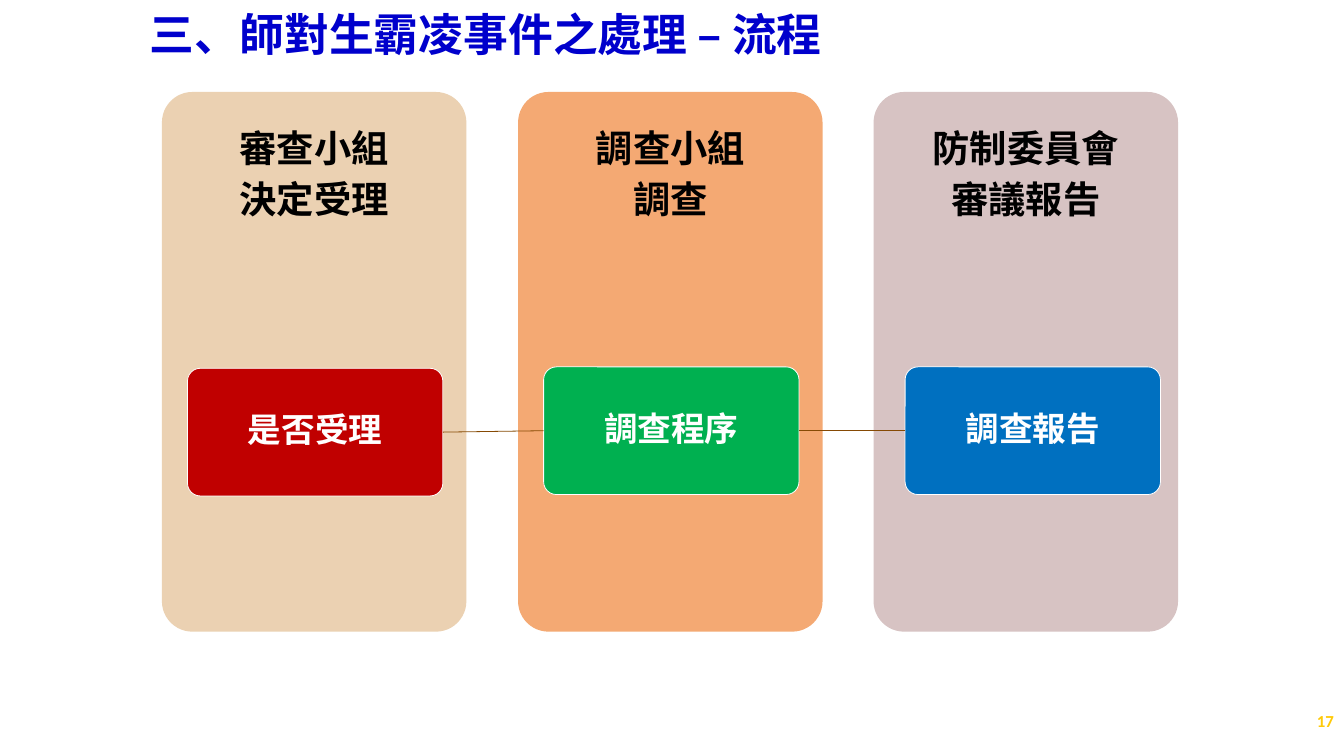
from lxml import etree
from pptx import Presentation
from pptx.dml.color import RGBColor
from pptx.enum.shapes import MSO_CONNECTOR, MSO_SHAPE
from pptx.enum.text import MSO_ANCHOR, MSO_AUTO_SIZE, PP_ALIGN
from pptx.oxml.ns import qn
from pptx.util import Pt

CJK = "Noto Sans CJK SC"
PANEL_TOP, PANEL_W, PANEL_H = 98.6, 326.2, 578.2
STEP_W, STEP_H = 273.6, 136.8
STAGES = [
    (173.5, "EBD1B2", ["審查小組", "決定受理"], (200.9, 394.6), "C00000", "是否受理"),
    (555.1, "F4A973", ["調查小組", "調查"], (582.5, 393.1), "00B050", "調查程序"),
    (936, "D7C3C3", ["防制委員會", "審議報告"], (969.8, 393.1), "0070C0", "調查報告"),
]


def rgb(value):
    return RGBColor.from_string(value)


def apply(obj, **values):
    for name, value in values.items():
        setattr(obj, name, value)


def place(sp, box):
    apply(sp, **dict(zip(("left", "top", "width", "height"), map(Pt, box))))


def write(sp, lines, size, color, font=CJK, inset=3.6, anchor=MSO_ANCHOR.MIDDLE, **para):
    tf = sp.text_frame
    apply(tf, word_wrap=True, auto_size=MSO_AUTO_SIZE.NONE, vertical_anchor=anchor)
    apply(tf, **{f"margin_{side}": Pt(inset) for side in ("left", "right", "top", "bottom")})
    for i, text in enumerate(lines):
        p = tf.add_paragraph() if i else tf.paragraphs[0]
        apply(p, **para)
        r = p.add_run()
        r.text = text
        apply(r.font, size=Pt(size), bold=True, name=font)
        r.font.color.rgb = rgb(color)
        ea = etree.SubElement(r.font._element, qn("a:ea"))
        ea.set("typeface", CJK)


def add_round_rect(s, box, fill, line=None):
    sp = s.shapes.add_shape(MSO_SHAPE.ROUNDED_RECTANGLE, *map(Pt, box))
    sp.adjustments[0] = 0.1
    sp.shadow.inherit = False
    sp.fill.solid()
    sp.fill.fore_color.rgb = rgb(fill)
    if line:
        sp.line.color.rgb = rgb(line)
        sp.line.width = Pt(0.85)
    else:
        sp.line.fill.background()
    return sp


def add_title(s, box):
    title = s.shapes.title
    place(title, box)
    write(title, ["三、師對生霸凌事件之處理 – 流程"], 48, "0000CC", font="Arial",
          inset=7.2, anchor=MSO_ANCHOR.TOP, alignment=PP_ALIGN.LEFT)
    title.text_frame.margin_top = Pt(3.6)


def add_panel(s, box, fill, heading):
    add_round_rect(s, box, fill)
    left, top, width, height = box
    sp = s.shapes.add_textbox(*map(Pt, (left, top, width, height * 0.3)))
    write(sp, heading, 40, "000000", inset=22.4, alignment=PP_ALIGN.CENTER,
          line_spacing=Pt(48), space_after=Pt(6))


def add_step(s, box, fill, label):
    sp = add_round_rect(s, box, fill, "FFFFFF")
    write(sp, [label], 36, "FFFFFF", inset=6, alignment=PP_ALIGN.CENTER, line_spacing=0.9)
    return sp


def add_link(s, start, end):
    link = s.shapes.add_connector(MSO_CONNECTOR.STRAIGHT, 0, 0, 0, 0)
    link.begin_connect(start, 3)
    link.end_connect(end, 1)
    link.line.color.rgb = rgb("864A04")
    link.line.width = Pt(0.85)
    etree.SubElement(link._element.spPr, qn("a:effectLst"))


def add_page_number(s, box):
    sp = s.shapes.add_textbox(*map(Pt, box))
    write(sp, ["17"], 18, "FFCA08", font="Calibri", inset=7.2, alignment=PP_ALIGN.RIGHT)


def main():
    prs = Presentation()
    apply(prs, slide_width=Pt(1440), slide_height=Pt(810))
    s = prs.slides.add_slide(prs.slide_layouts[5])
    add_title(s, (153.4, 3.6, 1286.6, 106.6))
    for left, fill, heading, *_ in STAGES:
        add_panel(s, (left, PANEL_TOP, PANEL_W, PANEL_H), fill, heading)
    steps = [add_step(s, (*corner, STEP_W, STEP_H), fill, label)
             for *_, corner, fill, label in STAGES]
    for start, end in zip(steps, steps[1:]):
        add_link(s, start, end)
    add_page_number(s, (1255.7, 751, 180.7, 43.2))
    prs.save("out.pptx")


if __name__ == "__main__":
    main()
